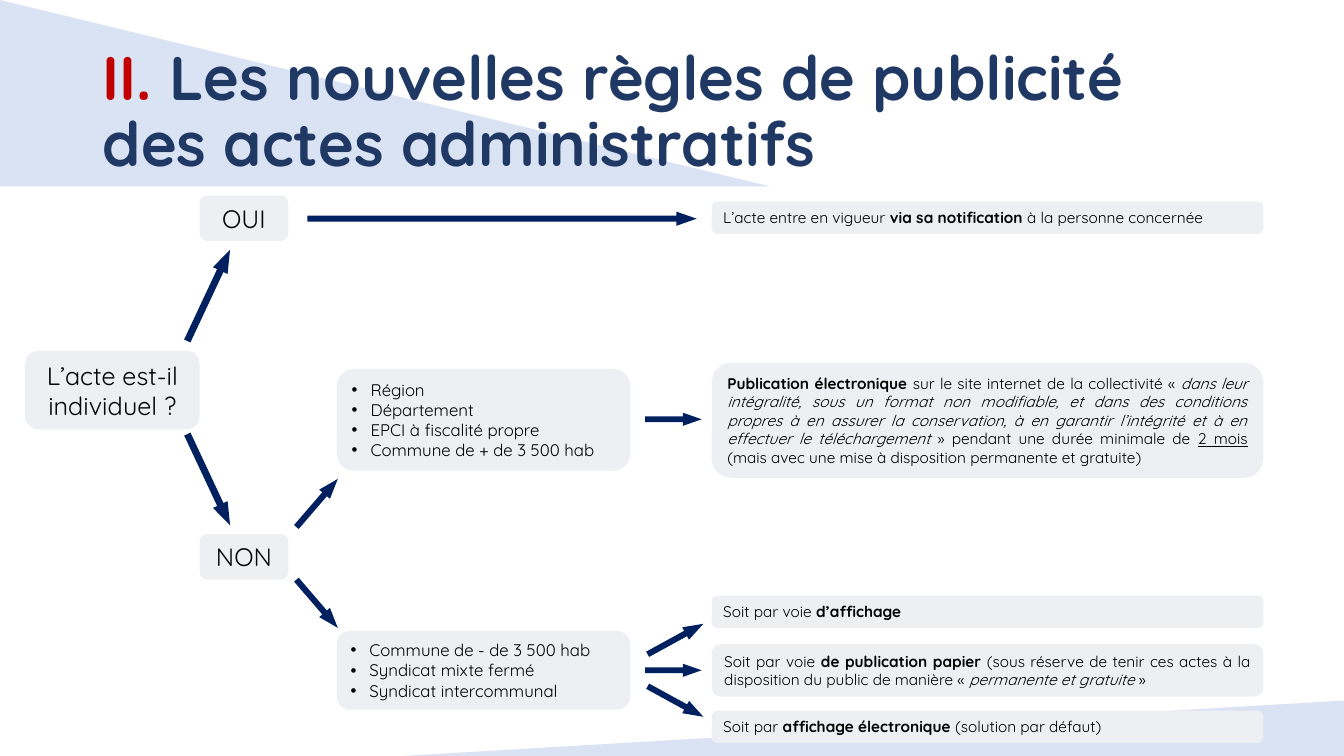
from dataclasses import dataclass

from lxml import etree
from pptx import Presentation
from pptx import util as u
from pptx.dml.color import RGBColor
from pptx.enum import shapes, text
from pptx.oxml import ns

KIND = shapes.MSO_SHAPE
ALIGN = text.PP_ALIGN


@dataclass(frozen=True)
class Theme:
    font: str = "Quicksand"
    pale: str = "DAE3F3"
    card: str = "EDEFF3"
    dark: str = "203864"
    red: str = "C00000"
    arrow: str = "002060"
    ink: str = "000000"
    head: int = 44
    step: int = 18
    list: int = 12
    body: int = 11


class Board:
    """Places elements on a grid of 0.1 inch cells: columns across, rows down."""
    cell = u.Inches(0.1)

    def __init__(self, slide, theme):
        self.slide, self.theme = slide, theme

    def grid(self, *cells):
        return [round(n * self.cell) for n in cells]

    def shape(self, kind, place, color):
        item = self.slide.shapes.add_shape(kind, *self.grid(*place))
        item.shadow.inherit = False
        item.fill.solid()
        item.fill.fore_color.rgb = RGBColor.from_string(color)
        item.line.fill.background()
        return item

    def wedge(self, place, flip=False):
        item = self.shape(KIND.RIGHT_TRIANGLE, place, self.theme.pale)
        if flip:
            item.element.spPr.get_or_add_xfrm().set("flipH", "1")

    def run(self, para, words, size, marks="", color=None):
        """Marks: any of b (bold), i (italic), u (underlined)."""
        run = para.add_run()
        run.text = words
        font = run.font
        font.name, font.size = self.theme.font, u.Pt(size)
        font.color.rgb = RGBColor.from_string(color or self.theme.ink)
        font.bold, font.italic, font.underline = (m in marks for m in "biu")

    def title(self, place, runs):
        frame = self.slide.shapes.add_textbox(*self.grid(*place)).text_frame
        frame.word_wrap = True
        frame.vertical_anchor = text.MSO_ANCHOR.MIDDLE
        para = frame.paragraphs[0]
        para.line_spacing = 0.9
        for words, color in runs:
            self.run(para, words, self.theme.head, "b", color)

    def card(self, place, paras, size, align=ALIGN.JUSTIFY, dots=False):
        frame = self.shape(KIND.ROUNDED_RECTANGLE, place, self.theme.card).text_frame
        frame.word_wrap = True
        frame.auto_size = text.MSO_AUTO_SIZE.SHAPE_TO_FIT_TEXT
        frame.vertical_anchor = text.MSO_ANCHOR.MIDDLE
        for n, runs in enumerate(paras):
            para = frame.add_paragraph() if n else frame.paragraphs[0]
            para.alignment = align
            if dots:
                self.dot(para)
            for words, marks in runs:
                self.run(para, words, size, marks)

    def dot(self, para):
        props = para._p.get_or_add_pPr()
        dent = self.grid(1.88)[0]
        props.set("marL", str(dent))
        props.set("indent", str(-dent))
        etree.SubElement(props, ns.qn("a:buFont")).set("typeface", "Arial")
        etree.SubElement(props, ns.qn("a:buChar")).set("char", "•")

    def step(self, place, words):
        self.card(place, [[(words, "")]], self.theme.step, ALIGN.CENTER)

    def list(self, place, lines):
        self.card(place, [[(line, "")] for line in lines], self.theme.list, dots=True)

    def note(self, row, high, runs):
        self.card((70.6, row, 54.7, high), [runs], self.theme.body)

    def arrow(self, col, row, long, thick, turn=0):
        """Arrow centred on (col, row), turned clockwise in degrees."""
        place = (col - long / 2, row - thick / 2, long, thick)
        item = self.shape(KIND.RIGHT_ARROW, place, self.theme.arrow)
        item.adjustments[0], item.adjustments[1] = 0.43, 1.43
        item.rotation = turn


def main():
    deck = Presentation()
    deck.slide_width, deck.slide_height = u.Inches(13.33), u.Inches(7.5)
    theme = Theme()
    board = Board(deck.slides.add_slide(deck.slide_layouts[6]), theme)

    # Background wedges and title
    board.wedge((0, 0, 76.4, 18.5))
    board.title((9.2, 4, 115, 14.5), [
        ("II. ", theme.red),
        ("Les nouvelles règles de publicité des actes administratifs", theme.dark)])
    board.wedge((39.9, 69.5, 93.4, 5.5), flip=True)

    # Question and its two answers
    board.step((2.5, 34.8, 17.3, 7.8), "L’acte est-il individuel ?")
    for row, words in ((19.4, "OUI"), (53, "NON")):
        board.step((19.8, row, 8.8, 4.5), words)

    # Kinds of local authority
    board.list((33.4, 36.6, 29.1, 10.1), [
        "Région", "Département", "EPCI à fiscalité propre",
        "Commune de + de 3 500 hab"])
    board.list((33.4, 62.6, 29.1, 7.8), [
        "Commune de - de 3 500 hab", "Syndicat mixte fermé",
        "Syndicat intercommunal"])

    # Outcomes: top row, height, runs
    board.note(20, 3.2, [
        ("L’acte entre en vigueur ", ""), ("via sa notification", "b"),
        (" à la personne concernée", "")])
    board.note(36, 11.4, [
        ("Publication électronique", "b"),
        (" sur le site internet de la collectivité « ", ""),
        ("dans leur intégralité, sous un format non modifiable, et dans des "
         "conditions propres à en assurer la conservation, à en garantir "
         "l’intégrité et à en effectuer le téléchargement", "i"),
        (" » pendant une durée minimale de ", ""), ("2 mois", "u"),
        (" (mais avec une mise à disposition permanente et gratuite)", "")])
    board.note(59.1, 3.2, [("Soit par voie ", ""), ("d’affichage", "b")])
    board.note(63.9, 5.2, [
        ("Soit par voie ", ""), ("de publication papier", "b"),
        (" (sous réserve de tenir ces actes à la disposition du public de "
         "manière « ", ""),
        ("permanente et gratuite", "i"), (" »", "")])
    board.note(70.5, 3.2, [
        ("Soit par ", ""), ("affichage électronique", "b"),
        (" (solution par défaut)", "")])

    # Arrows: straight ones, then pairs that branch up and down
    board.arrow(49.8, 21.7, 38.6, 1.4)
    for row in (41.6, 66.5):
        board.arrow(66.8, row, 5.6, 1.3)
    for col, high, low, long, thick, turn in (
            (20.7, 29.3, 47.6, 10, 1.6, 64.9),
            (31.45, 49.9, 59.9, 6.3, 1.4, 49.3),
            (67, 63.4, 69.6, 6.3, 1.4, 28.7)):
        board.arrow(col, high, long, thick, -turn)
        board.arrow(col, low, long, thick, turn)

    deck.save("out.pptx")


if __name__ == "__main__":
    main()
